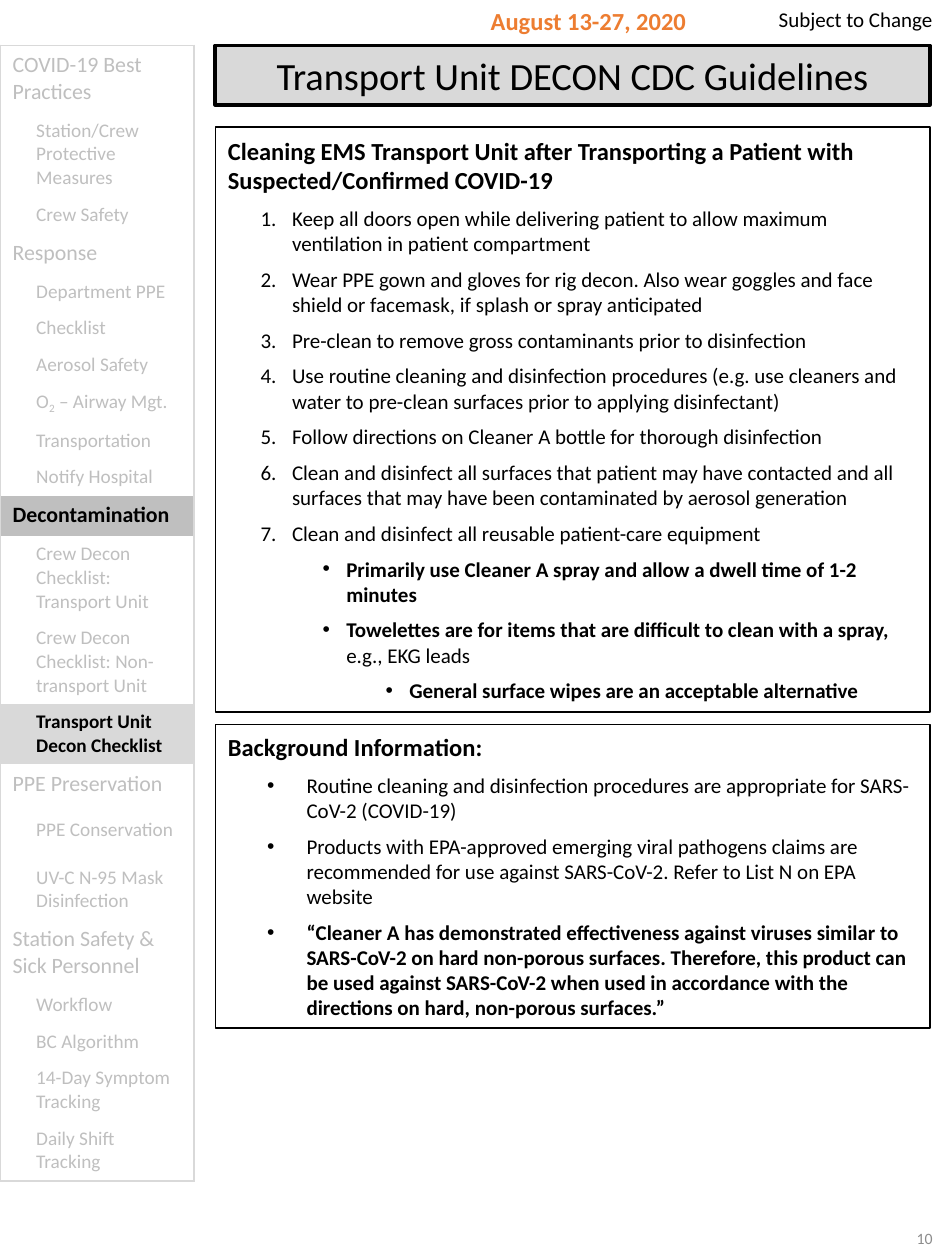
from lxml import etree
from pptx import Presentation
from pptx.dml.color import RGBColor
from pptx.enum.shapes import MSO_SHAPE as Shape
from pptx.enum.text import MSO_ANCHOR as Anchor, MSO_AUTO_SIZE as AutoSize, PP_ALIGN as Align
from pptx.oxml.ns import qn
from pptx.util import Pt

FONT = "Calibri"
BLACK, GREY, PALE = "000000", "BFBFBF", "D9D9D9"
NO_STYLE = "{2D5ABB26-0587-4C30-8999-92F81FD0307C}"

MENU = [
    ("COVID-19 Best Practices", 0, 38.2),
    ("Station/Crew Protective Measures", 1, 48),
    ("Crew Safety", 1, 21),
    ("Response", 0, 23),
    ("Department PPE", 1, 21),
    ("Checklist", 1, 21),
    ("Aerosol Safety", 1, 21),
    ("O|2| – Airway Mgt.", 1, 21),
    ("Transportation", 1, 21),
    ("Notify Hospital", 1, 21),
    ("Decontamination", 0, 23),
    ("Crew Decon Checklist: Transport Unit", 1, 48),
    ("Crew Decon Checklist: Non-transport Unit", 1, 48),
    ("Transport Unit Decon Checklist", 1, 34.5),
    ("PPE Preservation", 0, 27.2),
    ("PPE Conservation", 1, 27.2),
    ("UV-C N-95 Mask Disinfection", 1, 34.5),
    ("Station Safety & Sick Personnel", 0, 38.2),
    ("Workflow", 1, 21),
    ("BC Algorithm", 1, 21),
    ("14-Day Symptom Tracking", 1, 34.5),
    ("Daily Shift Tracking", 1, 34.5),
]
ACTIVE = {"Decontamination": GREY, "Transport Unit Decon Checklist": PALE}

HEADING, STEP, POINT, SUBPOINT, FACT = "heading", "step", "point", "subpoint", "fact"
INDENTS = {HEADING: (0, 0, 0), STEP: (0, 36.7, -18), POINT: (1, 67.7, -13.5),
           SUBPOINT: (2, 103.7, -13.5), FACT: (0, 45, -22.5)}

CLEANING = [
    (HEADING, "Cleaning EMS Transport Unit after Transporting a Patient with Suspected/Confirmed COVID-19", ""),
    (STEP, "", "Keep all doors open while delivering patient to allow maximum ventilation in patient compartment"),
    (STEP, "", "Wear PPE gown and gloves for rig decon. Also wear goggles and face shield or facemask, "
               "if splash or spray anticipated"),
    (STEP, "", "Pre-clean to remove gross contaminants prior to disinfection"),
    (STEP, "", "Use routine cleaning and disinfection procedures (e.g. use cleaners and water to "
               "pre-clean surfaces prior to applying disinfectant)"),
    (STEP, "", "Follow directions on Cleaner A bottle for thorough disinfection"),
    (STEP, "", "Clean and disinfect all surfaces that patient may have contacted and all surfaces that "
               "may have been contaminated by aerosol generation"),
    (STEP, "", "Clean and disinfect all reusable patient-care equipment"),
    (POINT, "Primarily use Cleaner A spray and allow a dwell time of 1-2 minutes", ""),
    (POINT, "Towelettes are for items that are difficult to clean with a spray, ", "e.g., EKG leads"),
    (SUBPOINT, "General surface wipes are an acceptable alternative", ""),
]
BACKGROUND = [
    (HEADING, "Background Information:", ""),
    (FACT, "", "Routine cleaning and disinfection procedures are appropriate for SARS-CoV-2 (COVID-19)"),
    (FACT, "", "Products with EPA-approved emerging viral pathogens claims are recommended for use "
               "against SARS-CoV-2. Refer to List N on EPA website"),
    (FACT, "“Cleaner A has demonstrated effectiveness against viruses similar to SARS-CoV-2 on hard "
           "non-porous surfaces. Therefore, this product can be used against SARS-CoV-2 when used in "
           "accordance with the directions on hard, non-porous surfaces.”", ""),
]


def color(value):
    """Turn a hex string into a colour."""
    return RGBColor.from_string(value)


def style(span, size, ink, bold=False):
    """Set the font of one run."""
    span.font.name = FONT
    span.font.size = Pt(size)
    span.font.bold = bold
    span.font.color.rgb = color(ink)


def set_indent(para, left, first=0, bullet=None):
    """Set the indents of a paragraph and its bullet or number."""
    props = para._p.get_or_add_pPr()
    props.set("marL", str(Pt(left)))
    props.set("indent", str(Pt(first)))
    if bullet:
        etree.SubElement(props, qn("a:buFont"), typeface=FONT if bullet == "1." else "Arial")
        if bullet == "1.":
            etree.SubElement(props, qn("a:buAutoNum"), type="arabicPeriod")
        else:
            etree.SubElement(props, qn("a:buChar"), char=bullet)


def set_borders(cell, sides):
    """Draw the named sides of a cell and clear the others."""
    props = cell._tc.get_or_add_tcPr()
    for place, side in enumerate("LRTB"):
        line = etree.Element(qn(f"a:ln{side}"), w=str(Pt(1)))
        if side in sides:
            fill = etree.SubElement(line, qn("a:solidFill"))
            etree.SubElement(fill, qn("a:srgbClr"), val=PALE)
        else:
            etree.SubElement(line, qn("a:noFill"))
        props.insert(place, line)


def add_label(page, left, top, width, height, text, size, ink, align, bold=False, anchor=Anchor.TOP):
    """Add one line of free text."""
    frame = page.shapes.add_textbox(Pt(left), Pt(top), Pt(width), Pt(height)).text_frame
    frame.word_wrap = True
    frame.vertical_anchor = anchor
    frame.text = text
    para = frame.paragraphs[0]
    para.alignment = align
    style(para.runs[0], size, ink, bold)


def add_menu(page, left, top, width):
    """Add the side menu with the current section highlighted."""
    height = sum(row[2] for row in MENU)
    table = page.shapes.add_table(len(MENU), 1, Pt(left), Pt(top), Pt(width), Pt(height)).table
    table.first_row = table.horz_banding = False
    table._tbl.tblPr.find(qn("a:tableStyleId")).text = NO_STYLE
    table.columns[0].width = Pt(width)
    for index, (text, level, row_height) in enumerate(MENU):
        table.rows[index].height = Pt(row_height)
        cell = table.cell(index, 0)
        para = cell.text_frame.paragraphs[0]
        set_indent(para, 13.5 * level)
        active = text in ACTIVE
        for place, part in enumerate(text.split("|")):
            span = para.add_run()
            span.text = part
            style(span, 11 if level else 12.5, BLACK if active else GREY, active)
            if place == 1:
                span.font._element.set("baseline", "-25000")
        if active:
            cell.fill.solid()
            cell.fill.fore_color.rgb = color(ACTIVE[text])
        else:
            cell.fill.background()
        set_borders(cell, "LR" + "T" * (index == 0) + "B" * (index == len(MENU) - 1))


def add_frame(page, left, top, width, height, line_width):
    """Add an outlined rectangle and return it."""
    box = page.shapes.add_shape(Shape.RECTANGLE, Pt(left), Pt(top), Pt(width), Pt(height))
    box.shadow.inherit = False
    box.fill.background()
    box.line.color.rgb = color(BLACK)
    box.line.width = Pt(line_width)
    box.text_frame.word_wrap = True
    box.text_frame.auto_size = AutoSize.SHAPE_TO_FIT_TEXT
    box.text_frame.vertical_anchor = Anchor.MIDDLE
    return box


def add_title(page, left, top, width, height, text):
    """Add the shaded title bar."""
    box = add_frame(page, left, top, width, height, 2.25)
    box.fill.solid()
    box.fill.fore_color.rgb = color(PALE)
    box.text_frame.text = text
    para = box.text_frame.paragraphs[0]
    para.alignment = Align.CENTER
    style(para.runs[0], 22, BLACK)


def add_panel(page, left, top, width, height, items):
    """Add a framed panel with a heading and its list."""
    frame = add_frame(page, left, top, width, height, 1).text_frame
    for index, (kind, strong, plain) in enumerate(items):
        para = frame.add_paragraph() if index else frame.paragraphs[0]
        level, indent, first = INDENTS[kind]
        para.level = level
        para.alignment = Align.LEFT
        if index:
            para.space_before = Pt(6)
        set_indent(para, indent, first, {HEADING: None, STEP: "1."}.get(kind, "•"))
        for text, bold in ((strong, True), (plain, False)):
            if text:
                span = para.add_run()
                span.text = text
                style(span, 14 if kind == HEADING else 12, BLACK, bold)


def main():
    """Build the guideline page."""
    deck = Presentation()
    deck.slide_width, deck.slide_height = Pt(540), Pt(720)
    page = deck.slides.add_slide(deck.slide_layouts[6])
    add_label(page, 418.3, 688.3, 121.7, 38.2, "10", 9, "8C8C8C", Align.RIGHT, anchor=Anchor.MIDDLE)
    add_label(page, 254.2, 0, 164.1, 41, "August 13-27, 2020", 14, "ED7D31", Align.CENTER, bold=True)
    add_label(page, 418.3, 0, 121.7, 21.6, "Subject to Change", 12, BLACK, Align.RIGHT)
    add_menu(page, 0, 26, 110.9)
    add_title(page, 123.1, 26, 408.2, 34, "Transport Unit DECON CDC Guidelines")
    add_panel(page, 123.1, 72.7, 408.2, 334, CLEANING)
    add_panel(page, 123.1, 414, 408.2, 173.5, BACKGROUND)
    deck.save("out.pptx")


if __name__ == "__main__":
    main()
